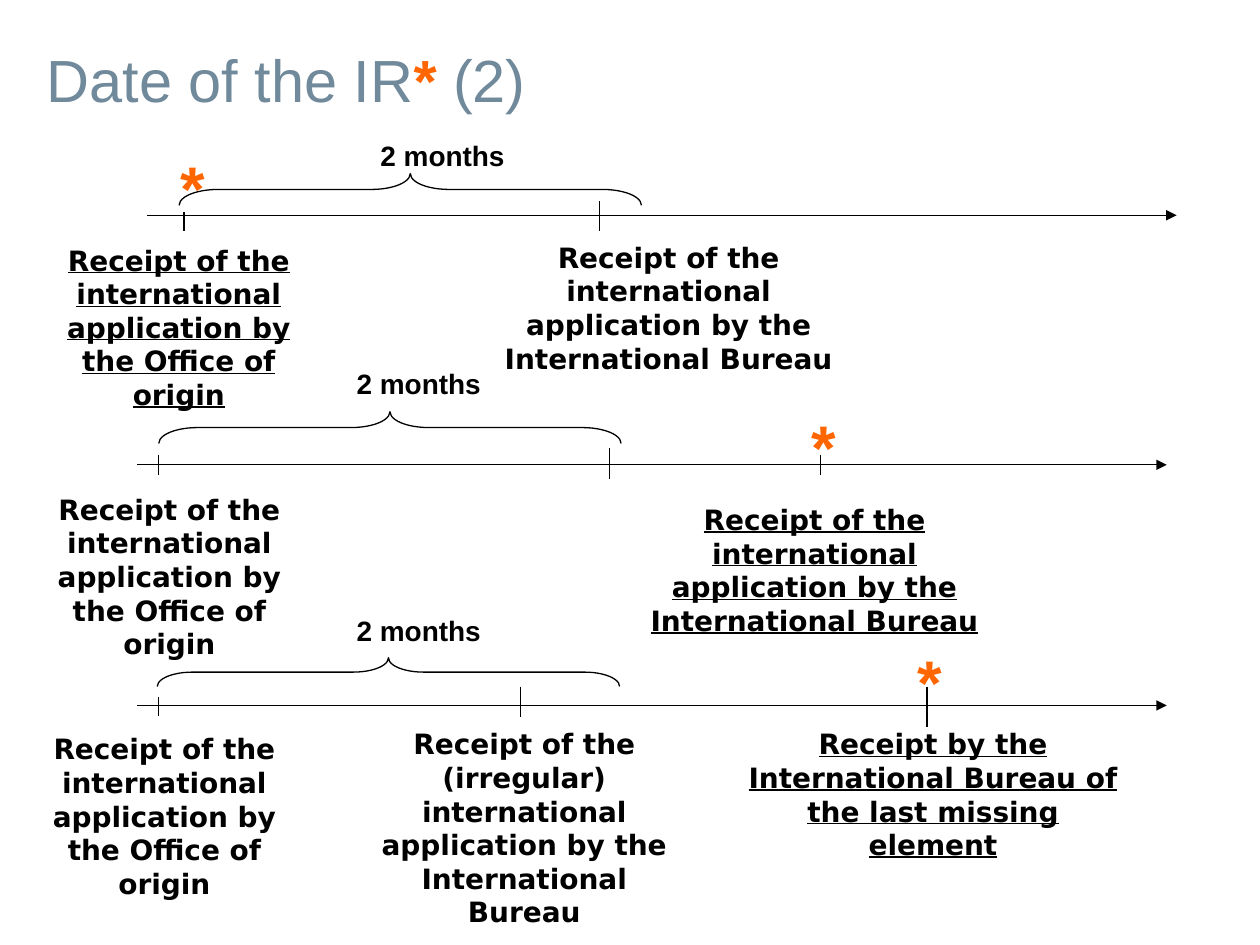
from pptx import Presentation
from pptx.dml.color import RGBColor
from pptx.enum.shapes import MSO_CONNECTOR, MSO_SHAPE
from pptx.enum.text import MSO_ANCHOR, PP_ALIGN
from pptx.oxml.ns import qn
from pptx.util import Cm, Pt
from lxml import etree

STRAIGHT = MSO_CONNECTOR.STRAIGHT
LEFT_BRACE = MSO_SHAPE.LEFT_BRACE
MIDDLE = MSO_ANCHOR.MIDDLE
LEFT, CENTER = PP_ALIGN.LEFT, PP_ALIGN.CENTER
BLACK = RGBColor(0x00, 0x00, 0x00)
SLATE = RGBColor(0x70, 0x89, 0x9B)
ORANGE = RGBColor(0xFF, 0x66, 0x00)

AXIS_LENGTH = 20.75
BRACE_LENGTH = 9.32

OFFICE = "Receipt of the international application by the Office of origin"
BUREAU = "Receipt of the international application by the International Bureau"
IRREGULAR = "Receipt of the (irregular) international application by the International Bureau"
MISSING = "Receipt by the International Bureau of the last missing element"

prs = Presentation()
prs.slide_width, prs.slide_height = Cm(25.4), Cm(19.05)
slide = prs.slides.add_slide(prs.slide_layouts[5])
shapes = slide.shapes


def add_line(x1, y1, x2, y2):
    line = shapes.add_connector(STRAIGHT, Cm(x1), Cm(y1), Cm(x2), Cm(y2))
    line.line.color.rgb = BLACK
    line.line.width = Pt(0.75)
    etree.SubElement(line._element.spPr, qn("a:effectLst"))
    return line


def add_label(text, left, top, width, height, font, size, color, align=LEFT, underline=None):
    frame = shapes.add_textbox(Cm(left), Cm(top), Cm(width), Cm(height)).text_frame
    frame.word_wrap = True
    frame.text = text
    paragraph = frame.paragraphs[0]
    paragraph.alignment = align
    run_font = paragraph.runs[0].font
    run_font.name, run_font.size, run_font.bold = font, Pt(size), True
    run_font.color.rgb = color
    run_font.underline = underline


title = shapes.title
title.left, title.top, title.width, title.height = Cm(0.69), Cm(0.64), Cm(24.28), Cm(1.9)
title.text_frame.vertical_anchor = MIDDLE
heading = title.text_frame.paragraphs[0]
heading.alignment = LEFT
for text, color, bold in [("Date of the IR", SLATE, False), ("*", ORANGE, True), (" (2)", SLATE, False)]:
    run = heading.add_run()
    run.text = text
    run.font.name, run.font.size, run.font.bold = "Arial", Pt(34), bold
    run.font.color.rgb = color

for left, y in [(2.97, 4.34), (2.77, 9.37), (2.77, 14.22)]:
    axis = add_line(left, y, left + AXIS_LENGTH, y)
    etree.SubElement(axis.line._get_or_add_ln(), qn("a:tailEnd"), type="triangle")

for x, top, bottom in [
    (3.71, 4.27, 4.65), (12.09, 4.06, 4.65),
    (3.2, 9.17, 9.58), (12.29, 9.04, 9.65), (16.54, 9.17, 9.58),
    (3.2, 14.05, 14.43), (10.49, 13.84, 14.45), (18.69, 13.84, 14.66),
]:
    add_line(x, top, x, bottom)

for left, top, depth in [(7.95, -0.84, 0.64), (7.54, 3.96, 0.64), (7.54, 8.89, 0.58)]:
    brace = shapes.add_shape(LEFT_BRACE, Cm(left), Cm(top), Cm(depth), Cm(BRACE_LENGTH))
    brace.rotation = 90
    brace.adjustments[0] = 1.22
    brace.shadow.inherit = False
    brace.fill.background()
    brace.line.color.rgb = BLACK
    brace.line.width = Pt(0.75)

for left, top in [(7.42, 2.67), (6.94, 7.26), (6.94, 12.24)]:
    add_label("2 months", left, top, 4.1, 0.94, "Arial", 16, BLACK)

for left, top, width in [(3.38, 2.87, 2.34), (16.1, 8.1, 2.34), (18.24, 12.83, 0.94)]:
    add_label("*", left, top, width, 1.78, "Arial", 36, ORANGE)

for text, left, top, width, height, decisive in [
    (OFFICE, 0.71, 4.78, 5.79, 4.67, True),
    (BUREAU, 9.91, 4.72, 7.14, 4.7, False),
    (OFFICE, 0.71, 9.8, 5.41, 3.66, False),
    (BUREAU, 12.29, 10.01, 8.26, 3, True),
    (OFFICE, 0.71, 14.63, 5.21, 3.66, False),
    (IRREGULAR, 7.04, 14.53, 7.06, 4.37, False),
    (MISSING, 14.71, 14.53, 8.2, 3, True),
]:
    add_label(text, left, top, width, height, "DejaVu Sans", 16, BLACK, CENTER, decisive)

prs.save("out.pptx")
